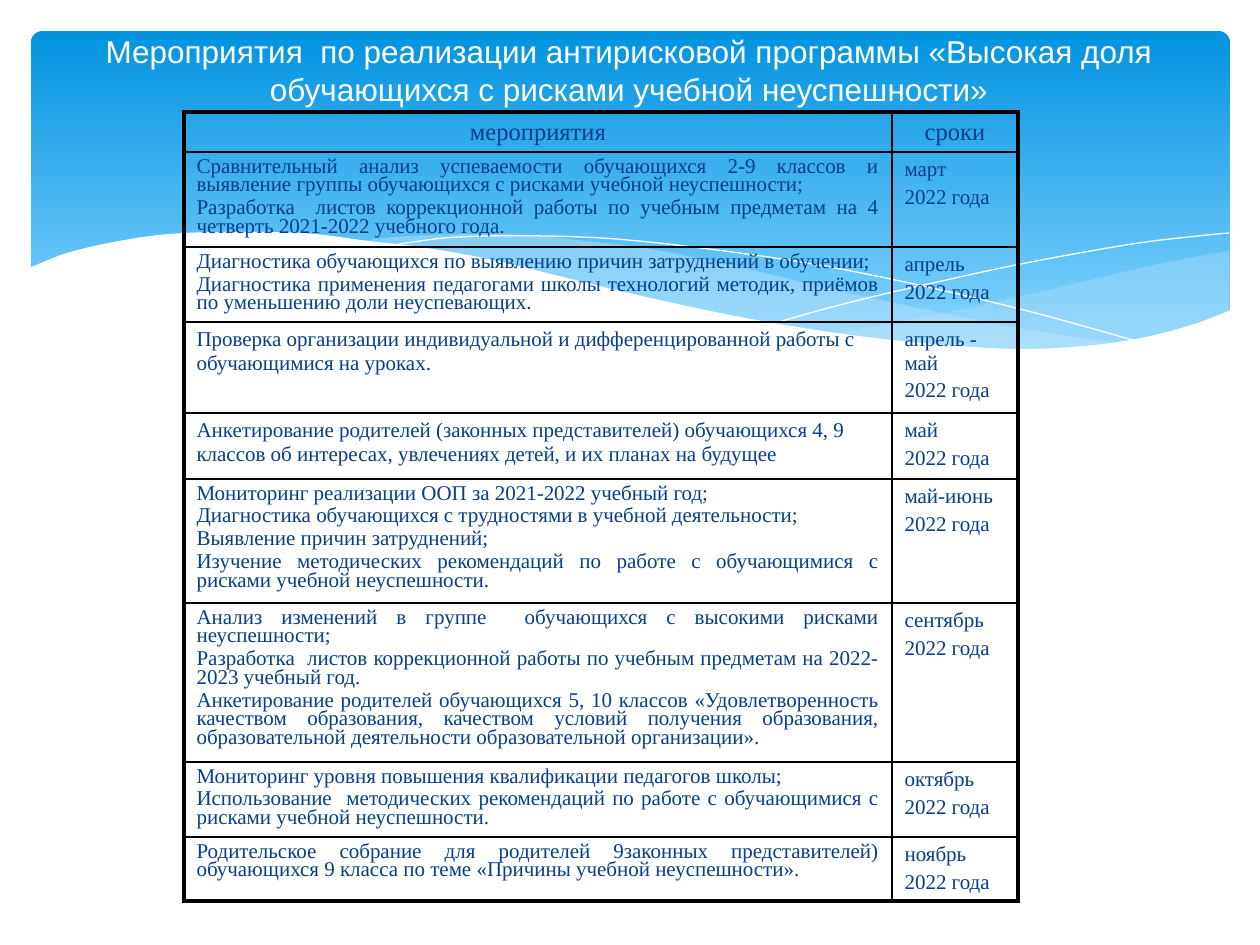
from lxml.etree import SubElement
from pptx import Presentation
from pptx.dml.color import RGBColor
from pptx.enum.shapes import MSO_SHAPE as Shape
from pptx.enum.text import PP_ALIGN as Align
from pptx.oxml.ns import qn
from pptx.util import Pt

PX = 914400 / 126
BLUE_TOP, BLUE_END = RGBColor(0x02, 0x93, 0xE0), RGBColor(0x83, 0xD3, 0xFE)
PALE = RGBColor(0xC6, 0xE7, 0xFC)
WHITE, BLACK = RGBColor(255, 255, 255), RGBColor(0, 0, 0)
NAVY = RGBColor(0x07, 0x3E, 0x87)

TITLE = "Мероприятия  по реализации антирисковой программы «Высокая доля обучающихся с рисками учебной неуспешности»"
HEADER = ("мероприятия", "сроки")
YEAR = "2022 года"
# row height, justified and tight, activities, month
ROWS = [
    (95, True, ["Сравнительный анализ успеваемости обучающихся 2-9 классов и выявление группы обучающихся с рисками учебной неуспешности;",
                "Разработка  листов коррекционной работы по учебным предметам на 4 четверть 2021-2022 учебного года."], "март"),
    (75, True, ["Диагностика обучающихся по выявлению причин затруднений в обучении;",
                "Диагностика применения педагогами школы технологий методик, приёмов по уменьшению доли неуспевающих."], "апрель"),
    (91, False, ["Проверка организации индивидуальной и дифференцированной работы с обучающимися на уроках."], "апрель - май"),
    (66, False, ["Анкетирование родителей (законных представителей) обучающихся 4, 9 классов об интересах, увлечениях детей, и их планах на будущее"], "май"),
    (124, True, ["Мониторинг реализации ООП за 2021-2022 учебный год;",
                 "Диагностика обучающихся с трудностями в учебной деятельности;",
                 "Выявление причин затруднений;",
                 "Изучение методических рекомендаций по работе с обучающимися с рисками учебной неуспешности."], "май-июнь"),
    (159, True, ["Анализ изменений в группе  обучающихся с высокими рисками неуспешности;",
                 "Разработка  листов коррекционной работы по учебным предметам на 2022-2023 учебный год.",
                 "Анкетирование родителей обучающихся 5, 10 классов «Удовлетворенность качеством образования, качеством условий получения образования, образовательной деятельности образовательной организации»."], "сентябрь"),
    (75, True, ["Мониторинг уровня повышения квалификации педагогов школы;",
                "Использование  методических рекомендаций по работе с обучающимися с рисками учебной неуспешности."], "октябрь"),
    (64, True, ["Родительское собрание для родителей 9законных представителей) обучающихся 9 класса по теме «Причины учебной неуспешности»."], "ноябрь"),
]
HEADER_HEIGHT = 40
COLUMNS = (708, 126)

RIGHT_BAND = [
    [(1229, 251), (1178, 260), (1123, 272), (1048, 290), (982, 305), (919, 318), (833, 334)],
    [(833, 334), (888, 341), (938, 346), (985, 349), (1026, 350), (1065, 349), (1099, 346),
     (1130, 342), (1160, 334), (1187, 326), (1229, 311)],
]
MIDDLE_BAND = [
    [(1125, 344), (1055, 334), (977, 320), (890, 302), (793, 280), (735, 266), (682, 255),
     (632, 246), (586, 241), (529, 235), (479, 234), (433, 235), (394, 237), (360, 241)],
    [(360, 241), (407, 247), (456, 256), (509, 266), (566, 280), (619, 292), (668, 302),
     (735, 317), (799, 329), (857, 338), (910, 345), (959, 349), (1003, 350), (1043, 350),
     (1080, 349), (1125, 344)],
]
FALLING_LINE = [[(389, 246), (413, 242), (445, 238), (488, 236), (546, 236), (616, 239), (701, 248),
                 (801, 262), (876, 276), (958, 294), (1047, 316), (1143, 343)]]
RISING_LINE = [[(772, 324), (821, 310), (876, 296), (942, 281), (1016, 265), (1091, 251),
                (1146, 242), (1198, 236), (1229, 233)]]
WHITE_WAVE = [
    [(1231, 310), (1197, 323), (1159, 334), (1118, 342), (1071, 347), (1019, 349), (959, 346),
     (892, 340), (816, 330), (730, 315), (633, 294), (563, 277), (493, 260), (427, 248),
     (368, 241), (315, 234), (266, 232), (223, 232), (184, 233), (150, 236), (119, 241),
     (94, 246), (74, 251), (58, 256), (29, 268)],
    [(29, 415), (1231, 415)],
]


def emu(*lengths):
    return [round(length * PX) for length in lengths]


def smooth(points, steps=4):
    """Catmull-Rom curve through the points."""
    padded = [points[0], *points, points[-1]]
    curve = [points[0]]
    for a, b, c, d in zip(padded, padded[1:], padded[2:], padded[3:]):
        for step in range(1, steps + 1):
            t = step / steps
            curve.append(tuple(
                (2 * q + (r - p) * t + (2 * p - 5 * q + 4 * r - s) * t ** 2
                 + (3 * q - p - 3 * r + s) * t ** 3) / 2
                for p, q, r, s in zip(a, b, c, d)))
    return curve


def add_wave(shapes, edges, fill=None, opacity=100):
    """Filled outline, or an open white hairline when there is no fill."""
    points = [point for edge in edges for point in (smooth(edge) if len(edge) > 2 else edge)]
    builder = shapes.build_freeform(*emu(*points[0]), scale=1.0)
    builder.add_line_segments([emu(*point) for point in points[1:]], close=fill is not None)
    wave = builder.convert_to_shape()
    wave.shadow.inherit = False
    if fill is None:
        wave.fill.background()
        wave.line.color.rgb = WHITE
        wave.line.width = Pt(0)
        return
    wave.fill.solid()
    wave.fill.fore_color.rgb = fill
    wave.line.fill.background()
    if opacity < 100:
        color = wave.fill._xPr.find(qn("a:solidFill"))[0]
        SubElement(color, qn("a:alpha"), val=str(opacity * 1000))


def write(frame, texts, size=12, font="Times New Roman", color=NAVY, align=Align.LEFT, spacing=None):
    frame.word_wrap = True
    for index, text in enumerate(texts):
        paragraph = frame.add_paragraph() if index else frame.paragraphs[0]
        paragraph.alignment = align
        paragraph.line_spacing = spacing
        if index:
            paragraph.space_before = Pt(size * 0.2)
        run = paragraph.add_run()
        run.text = text
        run.font.size, run.font.name = Pt(size), font
        run.font.color.rgb = color


def add_borders(cell, outer):
    """Black borders, thick on the sides named in outer."""
    properties = cell._tc.get_or_add_tcPr()
    for side in "LRTB":
        width = Pt(2.25 if side in outer else 1)
        line = SubElement(properties, qn(f"a:ln{side}"), w=str(width))
        SubElement(SubElement(line, qn("a:solidFill")), qn("a:srgbClr"), val=str(BLACK))
    cell.fill.background()


def add_schedule(shapes):
    heights = [HEADER_HEIGHT] + [row[0] for row in ROWS]
    table = shapes.add_table(len(heights), len(COLUMNS),
                             *emu(184, 112, sum(COLUMNS), sum(heights))).table
    table.first_row = table.horz_banding = False
    for column, width in zip(table.columns, emu(*COLUMNS)):
        column.width = width
    for row, height in zip(table.rows, emu(*heights)):
        row.height = height
    for column, text in enumerate(HEADER):
        write(table.cell(0, column).text_frame, [text], size=14, align=Align.CENTER)
    for index, (_, tight, activities, month) in enumerate(ROWS, 1):
        style = {"align": Align.JUSTIFY, "spacing": 0.8} if tight else {}
        write(table.cell(index, 0).text_frame, activities, **style)
        write(table.cell(index, 1).text_frame, [month, YEAR])
    for index in range(len(heights)):
        vertical = "T" if index == 0 else "B" if index == len(ROWS) else ""
        for column, side in enumerate("LR"):
            add_borders(table.cell(index, column), side + vertical)


def add_backdrop(shapes):
    panel = shapes.add_shape(Shape.ROUNDED_RECTANGLE, *emu(31, 31, 1199, 340))
    panel.adjustments[0] = 0.034
    panel.shadow.inherit = False
    panel.line.fill.background()
    panel.fill.gradient()
    panel.fill.gradient_angle = 270
    for stop, color, position in zip(panel.fill.gradient_stops, (BLUE_TOP, BLUE_END), (0, 0.9)):
        stop.color.rgb = color
        stop.position = position
    add_wave(shapes, RIGHT_BAND, PALE, 29)
    add_wave(shapes, MIDDLE_BAND, PALE, 40)
    add_wave(shapes, FALLING_LINE)
    add_wave(shapes, RISING_LINE)
    add_wave(shapes, WHITE_WAVE, WHITE)


def main():
    presentation = Presentation()
    presentation.slide_width, presentation.slide_height = emu(1260, 945)
    slide = presentation.slides.add_slide(presentation.slide_layouts[6])
    add_backdrop(slide.shapes)
    add_schedule(slide.shapes)
    title = slide.shapes.add_textbox(*emu(54, 26, 1150, 89))
    write(title.text_frame, [TITLE], size=18, font="Arial", color=WHITE, align=Align.CENTER)
    presentation.save("out.pptx")


if __name__ == "__main__":
    main()
